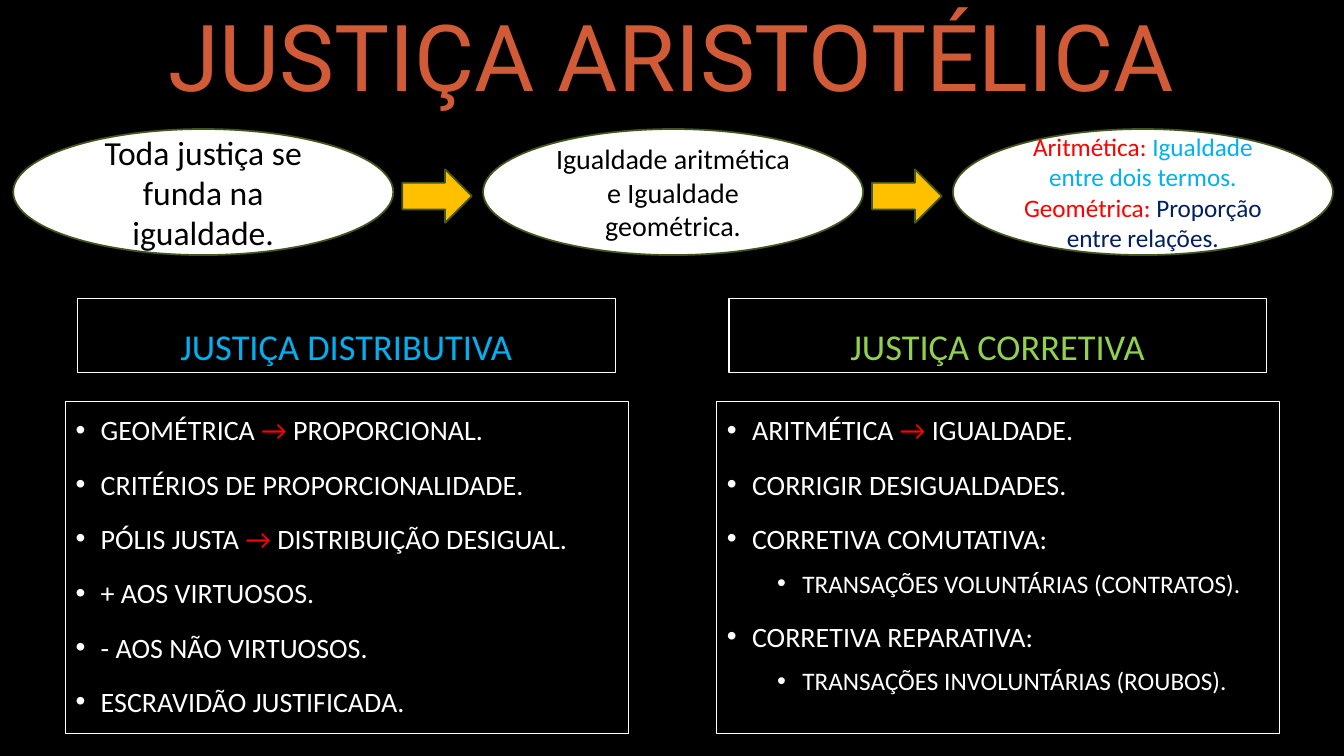
from dataclasses import dataclass

from lxml import etree
from pptx import Presentation
from pptx import util as u
from pptx.dml import color
from pptx.enum import shapes, text
from pptx.oxml import ns

SLIDE_WIDTH, SLIDE_HEIGHT = u.Inches(13.33), u.Inches(7.5)
COLORS = {
    "black": "000000", "white": "FFFFFF", "terracotta": "D15B37", "red": "FF0000",
    "blue": "00B0F0", "navy": "002060", "green": "92D050", "gold": "FFC000",
    "olive": "43561B",
}
STEP_PITCH = 34.96
COLUMN_PITCH = 48.46
INDENT = 0.25

Spans = list[tuple[str, str]]


@dataclass(frozen=True)
class Area:
    """Position and size in percent of the slide's width and height."""
    left: float
    top: float
    width: float
    height: float

    def shifted(self, distance: float) -> "Area":
        return Area(self.left + distance, self.top, self.width, self.height)

    def emu(self) -> tuple[int, int, int, int]:
        return (round(self.left * SLIDE_WIDTH / 100), round(self.top * SLIDE_HEIGHT / 100),
                round(self.width * SLIDE_WIDTH / 100), round(self.height * SLIDE_HEIGHT / 100))


@dataclass(frozen=True)
class Step:
    size: int
    paragraphs: list[Spans]


@dataclass(frozen=True)
class Item:
    spans: Spans
    level: int = 0


@dataclass(frozen=True)
class Column:
    heading: str
    color: str
    items: list[Item]


TITLE = Area(7.5, 0.93, 85, 14.53)
STEP = Area(0.98, 17.07, 28.28, 16.67)
ARROW = Area(29.93, 22.4, 5.18, 7.07)
HEADING = Area(5.78, 39.47, 40, 9.87)
LIST = Area(4.88, 53.07, 41.86, 44)


def plain(content: str) -> Item:
    return Item([(content, "white")])


def implies(cause: str, result: str) -> Item:
    return Item([(f"{cause} ", "white"), ("→", "red"), (f" {result}", "white")])


STEPS = [
    Step(24, [[("Toda justiça se funda na igualdade.", "black")]]),
    Step(20, [[("Igualdade aritmética e Igualdade geométrica.", "black")]]),
    Step(18, [[("Aritmética: ", "red"), ("Igualdade entre dois termos.", "blue")],
              [("Geométrica: ", "red"), ("Proporção entre relações.", "navy")]]),
]
COLUMNS = [
    Column("JUSTIÇA DISTRIBUTIVA", "blue", [
        implies("GEOMÉTRICA", "PROPORCIONAL."),
        plain("CRITÉRIOS DE PROPORCIONALIDADE."),
        implies("PÓLIS JUSTA", "DISTRIBUIÇÃO DESIGUAL."),
        plain("+ AOS VIRTUOSOS."),
        plain("- AOS NÃO VIRTUOSOS."),
        plain("ESCRAVIDÃO JUSTIFICADA."),
    ]),
    Column("JUSTIÇA CORRETIVA", "green", [
        implies("ARITMÉTICA", "IGUALDADE."),
        plain("CORRIGIR DESIGUALDADES."),
        plain("CORRETIVA COMUTATIVA:"),
        Item([("TRANSAÇÕES VOLUNTÁRIAS (CONTRATOS).", "white")], level=1),
        plain("CORRETIVA REPARATIVA:"),
        Item([("TRANSAÇÕES INVOLUNTÁRIAS (ROUBOS).", "white")], level=1),
    ]),
]


def rgb(name: str) -> color.RGBColor:
    return color.RGBColor.from_string(COLORS[name])


def add_box(page, kind, area: Area, *, line: str, weight: float, fill: str | None = None,
            anchor=text.MSO_ANCHOR.MIDDLE):
    box = page.shapes.add_shape(kind, *area.emu())
    box.shadow.inherit = False
    if fill:
        box.fill.solid()
        box.fill.fore_color.rgb = rgb(fill)
    else:
        box.fill.background()
    box.line.color.rgb = rgb(line)
    box.line.width = u.Pt(weight)
    box.text_frame.word_wrap = True
    box.text_frame.vertical_anchor = anchor
    return box


def add_bullet(para, level: int) -> None:
    properties = para._p.get_or_add_pPr()
    properties.set("marL", str(u.Inches(INDENT + 0.5 * level)))
    properties.set("indent", str(-u.Inches(INDENT)))
    tint = etree.SubElement(properties, ns.qn("a:buClr"))
    etree.SubElement(tint, ns.qn("a:srgbClr"), val=COLORS["white"])
    etree.SubElement(properties, ns.qn("a:buFont"), typeface="Arial")
    etree.SubElement(properties, ns.qn("a:buChar"), char="•")


def write(box, spans: Spans, *, size: float, font: str = "Calibri", spacing: float = 1.0,
          before: float = 0, align=text.PP_ALIGN.CENTER, bullet_level: int | None = None) -> None:
    """Fill the box's empty first paragraph, or add one after the existing text."""
    frame = box.text_frame
    first = not frame.paragraphs[0].runs
    para = frame.paragraphs[0] if first else frame.add_paragraph()
    para.alignment = align
    para.line_spacing = spacing
    para.space_before = u.Pt(0 if first else before)
    if bullet_level is not None:
        para.level = bullet_level
        add_bullet(para, bullet_level)
    for content, tone in spans:
        span = para.add_run()
        span.text = content
        span.font.name = font
        span.font.size = u.Pt(size)
        span.font.color.rgb = rgb(tone)


def add_title(page) -> None:
    box = page.shapes.add_textbox(*TITLE.emu())
    box.text_frame.word_wrap = True
    box.text_frame.vertical_anchor = text.MSO_ANCHOR.MIDDLE
    write(box, [("JUSTIÇA ARISTOTÉLICA", "terracotta")], size=66, font="Roboto", spacing=0.9)


def add_column(page, column: Column, offset: float) -> None:
    rectangle = shapes.MSO_SHAPE.RECTANGLE
    heading = add_box(page, rectangle, HEADING.shifted(offset), line="white", weight=0.75,
                      anchor=text.MSO_ANCHOR.BOTTOM)
    write(heading, [(column.heading, column.color)], size=26, spacing=0.85)
    listing = add_box(page, rectangle, LIST.shifted(offset), line="white", weight=0.75,
                      anchor=text.MSO_ANCHOR.TOP)
    for item in column.items:
        write(listing, item.spans, size=18 if item.level else 20, spacing=1.2,
              before=5 if item.level else 10, align=text.PP_ALIGN.LEFT,
              bullet_level=item.level)


def add_step(page, step: Step, offset: float) -> None:
    ellipse = add_box(page, shapes.MSO_SHAPE.OVAL, STEP.shifted(offset), fill="white",
                      line="olive", weight=1.25)
    for spans in step.paragraphs:
        write(ellipse, spans, size=step.size)


def main() -> None:
    deck = Presentation()
    deck.slide_width, deck.slide_height = SLIDE_WIDTH, SLIDE_HEIGHT
    page = deck.slides.add_slide(deck.slide_layouts[6])
    page.background.fill.solid()
    page.background.fill.fore_color.rgb = rgb("black")
    add_title(page)
    for index, column in enumerate(COLUMNS):
        add_column(page, column, index * COLUMN_PITCH)
    for index, step in enumerate(STEPS):
        add_step(page, step, index * STEP_PITCH)
    for index in range(len(STEPS) - 1):
        add_box(page, shapes.MSO_SHAPE.RIGHT_ARROW, ARROW.shifted(index * STEP_PITCH),
                fill="gold", line="olive", weight=1.25)
    deck.save("out.pptx")


if __name__ == "__main__":
    main()
